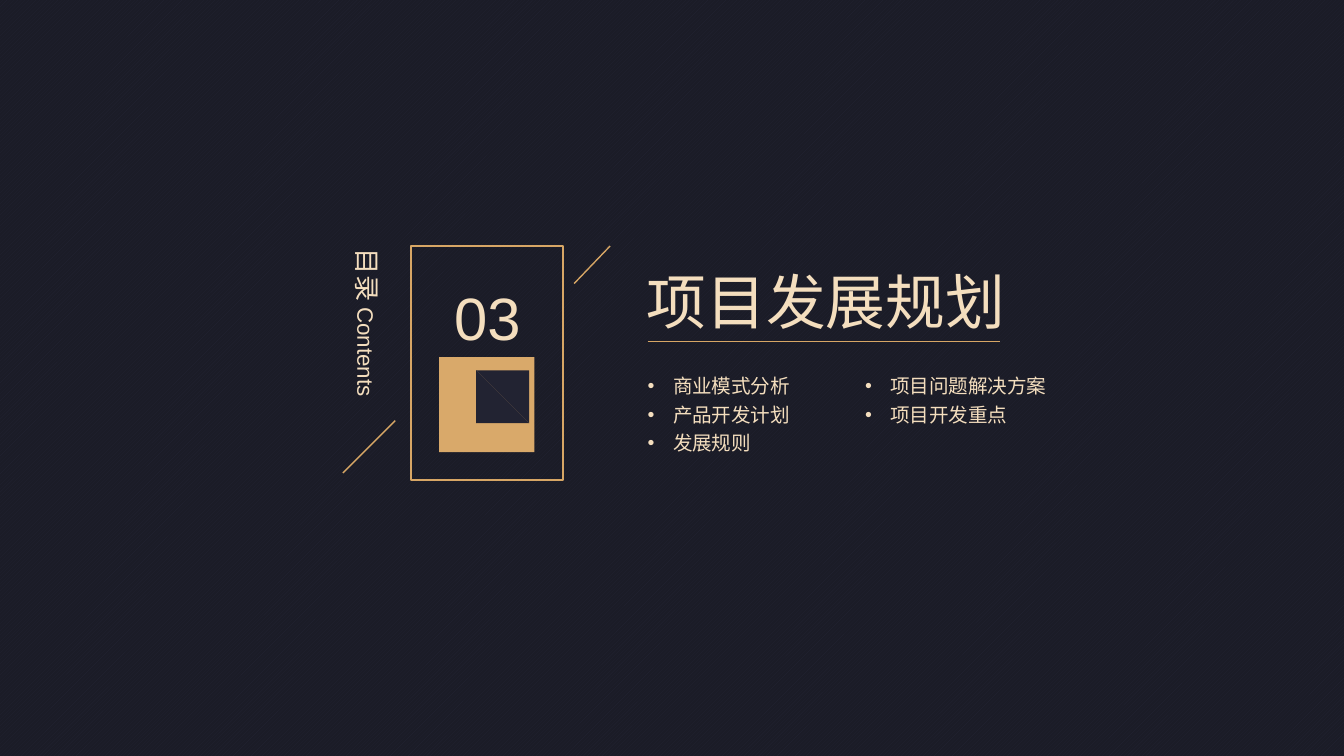
import lxml.etree
import pptx
import pptx.dml.color
import pptx.enum.dml
import pptx.enum.shapes
import pptx.enum.text
import pptx.oxml.ns
import pptx.util

Cm = pptx.util.Cm
Pt = pptx.util.Pt
qn = pptx.oxml.ns.qn
COLORS = {
    name: pptx.dml.color.RGBColor.from_string(value)
    for name, value in {
        "night": "1B1C27",
        "stripe": "222332",
        "gold": "D9A96A",
        "outline": "D7A665",
        "cream": "F4DEBE",
    }.items()
}
CENTER = pptx.enum.text.PP_ALIGN.CENTER

prs = pptx.Presentation()
prs.slide_width, prs.slide_height = Cm(25.4), Cm(14.29)
slide = prs.slides.add_slide(prs.slide_layouts[6])
backdrop = slide.background.fill
backdrop.patterned()
backdrop.pattern = pptx.enum.dml.MSO_PATTERN.LIGHT_UPWARD_DIAGONAL
backdrop.fore_color.rgb = COLORS["stripe"]
backdrop.back_color.rgb = COLORS["night"]


def add_text(box, paragraphs, margins=(0.25, 0.13), align=None, bullet=False):
    """Add a text box; each paragraph is a list of (text, point size) runs."""
    label = slide.shapes.add_textbox(*[Cm(length) for length in box])
    frame = label.text_frame
    frame.word_wrap = True
    frame.auto_size = pptx.enum.text.MSO_AUTO_SIZE.SHAPE_TO_FIT_TEXT
    frame.margin_left = frame.margin_right = Cm(margins[0])
    frame.margin_top = frame.margin_bottom = Cm(margins[1])
    for index, runs in enumerate(paragraphs):
        paragraph = frame.add_paragraph() if index else frame.paragraphs[0]
        paragraph.line_spacing = 1.2
        paragraph.alignment = align
        if bullet:
            properties = paragraph._p.get_or_add_pPr()
            properties.set("marL", str(Cm(0.48)))
            properties.set("indent", str(-Cm(0.48)))
            lxml.etree.SubElement(properties, qn("a:buFont")).set("typeface", "Arial")
            lxml.etree.SubElement(properties, qn("a:buChar")).set("char", "•")
        for text, size in runs:
            run = paragraph.add_run()
            run.text = text
            run.font.size = Pt(size)
            run.font.name = "Arial"
            run.font.color.rgb = COLORS["cream"]
    return label


# Vertical label and heading
contents = add_text((5.05, 6.1, 3.99, 0.84), [[("目录 ", 14), ("Contents", 12)]], (0.18, 0.1))
contents.rotation = 90
add_text((12.09, 4.65, 7.39, 1.63), [[("项目发展规划", 32)]], (0.13, 0.08))

# Topic lists
topic_columns = [
    (11.99, 3.91, 1.83, ["商业模式分析", "产品开发计划", "发展规则"]),
    (16.1, 4.6, 1.3, ["项目问题解决方案", "项目开发重点"]),
]
for left, width, height, topics in topic_columns:
    add_text((left, 6.86, width, height), [[(topic, 10.5)] for topic in topics], bullet=True)

# Number card
rectangle = pptx.enum.shapes.MSO_SHAPE.RECTANGLE
card = slide.shapes.add_shape(rectangle, Cm(7.77), Cm(4.65), Cm(2.87), Cm(4.42))
card.shadow.inherit = False
card.fill.background()
card.line.color.rgb = COLORS["outline"]
card.line.width = Pt(1)

tile = slide.shapes.add_shape(rectangle, Cm(8.3), Cm(6.75), Cm(1.8), Cm(1.8))
tile.shadow.inherit = False
tile.fill.solid()
tile.fill.fore_color.rgb = COLORS["gold"]
tile.line.fill.background()

add_text((8.41, 4.95, 1.6, 1.63), [[("03", 32)]], (0.13, 0.08), CENTER)

# House icon, outlines in cm
walls = [
    (8.86, 7.67), (8.86, 8.08), (8.89, 8.11), (9.09, 8.11), (9.11, 8.09), (9.11, 7.9),
    (9.28, 7.9), (9.28, 8.09), (9.3, 8.11), (9.5, 8.11), (9.53, 8.08), (9.53, 7.67),
    (9.2, 7.37),
]
roof = [
    (9.68, 7.57), (9.5, 7.42), (9.5, 7.21), (9.48, 7.18), (9.43, 7.18), (9.4, 7.21),
    (9.4, 7.34), (9.25, 7.19), (9.2, 7.17), (9.16, 7.19), (8.74, 7.57), (8.71, 7.61),
    (8.74, 7.67), (8.79, 7.69), (8.84, 7.67), (9.2, 7.33), (9.57, 7.67), (9.62, 7.69),
    (9.67, 7.67), (9.69, 7.62),
]
house = slide.shapes.add_group_shape()
for outline in (walls, roof):
    builder = house.shapes.build_freeform(*outline[0], scale=Cm(1))
    builder.add_line_segments(outline[1:], close=True)
    part = builder.convert_to_shape()
    part.shadow.inherit = False
    part.fill.solid()
    part.fill.fore_color.rgb = COLORS["stripe"]
    part.line.fill.background()

# Two slanted accents and the heading underline
for ends in [(6.48, 8.94, 7.47, 7.95), (10.85, 5.36, 11.53, 4.65), (12.24, 6.45, 18.9, 6.45)]:
    accent = slide.shapes.add_connector(
        pptx.enum.shapes.MSO_CONNECTOR.STRAIGHT, *[Cm(length) for length in ends]
    )
    accent.line.color.rgb = COLORS["outline"]
    accent.line.width = Pt(0.75)
    lxml.etree.SubElement(accent._element.spPr, qn("a:effectLst"))

prs.save("out.pptx")
